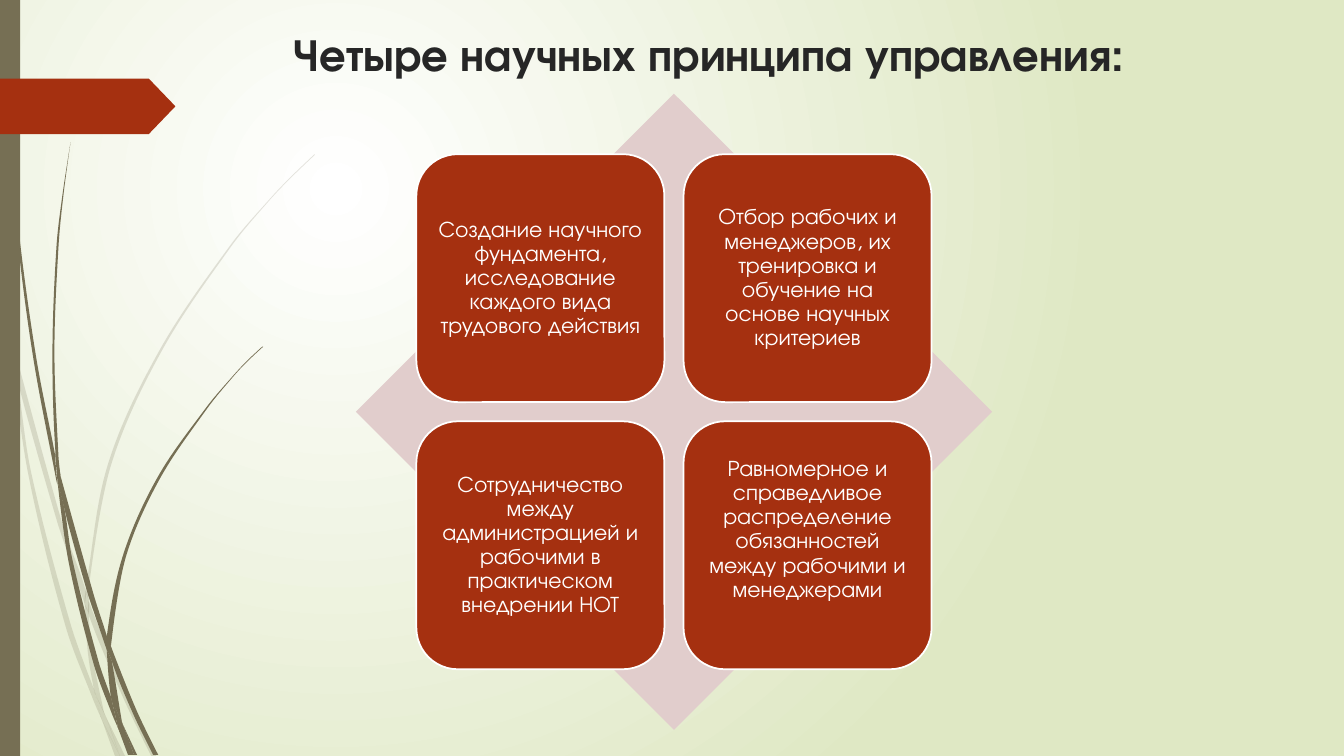
from math import hypot
from lxml.etree import SubElement
from pptx import Presentation
from pptx.dml.color import RGBColor
from pptx.enum.shapes import MSO_SHAPE as Shape
from pptx.enum.text import MSO_ANCHOR as Anchor, PP_ALIGN as Align
from pptx.oxml import parse_xml
from pptx.oxml.ns import nsdecls, qn
from pptx.util import Inches, Pt

FONT = "TeX Gyre Adventor"
OLIVE, RUST, ROSE, WHITE, INK = "766F54", "A53010", "E1CDCC", "FFFFFF", "262626"
UNITS = 10000  # freeform units per inch


def paint(shape, color, line=None):
    shape.shadow.inherit = False
    shape.fill.solid()
    shape.fill.fore_color.rgb = RGBColor.from_string(color)
    if line:
        shape.line.color.rgb = RGBColor.from_string(line)
        shape.line.width = Pt(1.25)
    else:
        shape.line.fill.background()


def round_off(shape):
    """Turn the straight sides of a freeform into curves, keeping sharp corners."""
    points = [(int(pt.get("x")), int(pt.get("y"))) for pt in shape.element.iter(qn("a:pt"))]
    count = len(points)
    handles = []
    for index, (x, y) in enumerate(points):
        (x0, y0), (x1, y1) = points[index - 1], points[(index + 1) % count]
        before, after = hypot(x - x0, y - y0), hypot(x1 - x, y1 - y)
        turn = (x - x0) * (x1 - x) + (y - y0) * (y1 - y)
        chord = hypot(x1 - x0, y1 - y0)
        bends = turn > 0.8 * before * after and chord > 0
        handles.append(((x1 - x0) / chord / 3, (y1 - y0) / chord / 3) if bends else (0, 0))
    for index, side in enumerate(list(shape.element.iter(qn("a:lnTo"))), start=1):
        (x0, y0), (x1, y1) = points[index - 1], points[index]
        (dx0, dy0), (dx1, dy1) = handles[index - 1], handles[index]
        length = hypot(x1 - x0, y1 - y0)
        side.tag = qn("a:cubicBezTo")
        controls = [(x0 + dx0 * length, y0 + dy0 * length), (x1 - dx1 * length, y1 - dy1 * length)]
        for position, (x, y) in enumerate(controls):
            control = SubElement(side, qn("a:pt"), x=str(round(x)), y=str(round(y)))
            side.insert(position, control)


presentation = Presentation()
presentation.slide_width, presentation.slide_height = Inches(13.33), Inches(7.5)
slide = presentation.slides.add_slide(presentation.slide_layouts[5])
shapes = slide.shapes

# Background: radial gradient
slide.element.find(qn("p:cSld")).insert(0, parse_xml(
    f'<p:bg {nsdecls("p", "a")}><p:bgPr><a:gradFill rotWithShape="1"><a:gsLst>'
    '<a:gs pos="0"><a:srgbClr val="FFFFFF"/></a:gs>'
    '<a:gs pos="100000"><a:srgbClr val="DFE8C4"/></a:gs></a:gsLst>'
    '<a:path path="circle"><a:fillToRect l="50000" t="50000" r="100000" b="100000"/></a:path>'
    '</a:gradFill><a:effectLst/></p:bgPr></p:bg>'))

# Grass: outlines of the blade sections in inches, pale ones behind dark ones
pale_grass = [
    [(0.11, 3.5), (0.09, 3.22), (0, 2.82), (0, 2.99), (0.1, 3.44)],
    [(0.58, 5.22), (0.84, 5.99), (0.85, 5.86), (0.62, 5.2), (0.14, 3.45), (0.17, 3.76)],
    [(0.92, 6.07), (0.88, 5.96), (0.88, 6.1), (1.23, 6.94), (1.5, 7.5), (1.55, 7.5),
     (1.27, 6.92)],
    [(1.19, 7.5), (1.24, 7.5), (1.05, 7.11)],
    [(0.93, 6.83), (0.7, 6.19), (0.31, 4.69), (0.17, 3.76), (0.11, 3.5), (0.28, 4.7),
     (0.65, 6.21), (0.92, 6.93), (1.01, 7.14), (0.99, 7.07)],
    [(0.84, 5.99), (0.87, 6.46), (0.93, 6.83), (0.96, 6.92), (1.05, 7.11), (1.03, 7.06),
     (0.91, 6.46), (0.88, 6.1), (0.88, 6.08)],
    [(0.88, 5.84), (1.1, 4.62), (1.6, 3.49), (2.29, 2.45), (2.68, 1.98), (2.9, 1.75),
     (3.12, 1.54), (3.12, 1.53), (2.89, 1.75), (2.68, 1.97), (2.28, 2.44), (1.58, 3.48),
     (1.07, 4.61), (0.85, 5.84), (0.85, 5.86), (0.88, 5.96)],
    [(1.01, 7.14), (1.14, 7.5), (1.19, 7.5)],
    [(0.88, 6.08), (0.88, 6.1), (0.88, 5.96), (0.85, 5.86), (0.84, 5.99)],
    [(0.96, 6.92), (0.93, 6.83), (0.99, 7.07), (1.01, 7.14), (1.19, 7.5), (1.05, 7.11)],
]
dark_grass = [
    [(0.07, 1.1), (0.17, 2.33), (0.33, 3.55), (0.56, 4.77), (0.57, 4.81), (0.55, 4.57),
     (0.55, 4.53), (0.36, 3.55), (0.19, 2.32), (0.08, 1.09), (0.05, 0.48), (0.04, 0),
     (0.03, 0), (0.04, 0.48)],
    [(0.88, 5.92), (1.06, 6.45), (1.06, 6.33), (1.06, 6.31), (0.93, 5.9), (0.6, 4.72),
     (0.64, 5.05)],
    [(1.13, 6.49), (1.1, 6.41), (1.11, 6.56), (1.32, 7.08), (1.52, 7.49), (1.57, 7.49),
     (1.36, 7.06)],
    [(1.1, 6.91), (0.98, 6.57), (0.72, 5.56), (0.64, 5.05), (0.57, 4.77), (0.68, 5.57),
     (0.93, 6.59), (1.11, 7.08), (1.17, 7.22), (1.16, 7.17)],
    [(0.6, 4.72), (0.58, 4.53), (0.54, 3.49), (0.58, 2.45), (0.63, 1.93), (0.7, 1.41),
     (0.62, 1.93), (0.56, 2.45), (0.52, 3.49), (0.55, 4.49)],
    [(1.33, 7.49), (1.36, 7.49), (1.22, 7.19)],
    [(0.57, 4.77), (0.64, 5.05), (0.6, 4.72), (0.55, 4.49), (0.55, 4.53)],
    [(1.11, 6.33), (1.25, 5.52), (1.58, 4.76), (2.05, 4.06), (2.31, 3.74), (2.45, 3.59),
     (2.61, 3.44), (2.6, 3.44), (2.45, 3.58), (2.31, 3.73), (2.04, 4.05), (1.56, 4.74),
     (1.22, 5.51), (1.06, 6.31), (1.1, 6.41)],
    [(1.17, 7.22), (1.27, 7.49), (1.31, 7.49)],
    [(1.06, 6.45), (1.1, 6.91), (1.16, 7.06), (1.22, 7.19), (1.21, 7.16), (1.11, 6.56),
     (1.09, 6.51)],
    [(1.06, 6.45), (1.09, 6.51), (1.11, 6.56), (1.1, 6.41), (1.06, 6.31), (1.06, 6.33)],
    [(1.16, 7.06), (1.1, 6.91), (1.16, 7.17), (1.17, 7.22), (1.3, 7.49), (1.33, 7.49),
     (1.22, 7.19)],
]
for opacity, sections in ((20, pale_grass), (100, dark_grass)):
    for section in sections:
        outline = [(x * UNITS, y * UNITS) for x, y in section]
        builder = shapes.build_freeform(*outline[0], scale=Inches(1) / UNITS)
        builder.add_line_segments(outline[1:] + outline[:1], close=True)
        blade = builder.convert_to_shape()
        paint(blade, OLIVE)
        round_off(blade)
        if opacity < 100:
            color = blade.element.spPr.find(qn("a:solidFill"))[0]
            SubElement(color, qn("a:alpha"), val=str(opacity * 1000))

# Side bar and arrow tab
side_bar = shapes.add_shape(Shape.RECTANGLE, 0, 0, Inches(0.2), presentation.slide_height)
paint(side_bar, OLIVE)
tab = shapes.add_shape(Shape.PENTAGON, 0, Inches(0.78), Inches(1.74), Inches(0.55))
tab.adjustments[0] = 0.48
paint(tab, RUST)

# Title
title = shapes.title
title.left, title.top, title.width, title.height = map(Inches, (1.63, 0.2, 10.81, 0.66))
title.text_frame.text = "Четыре научных принципа управления:"
title.text_frame.vertical_anchor = Anchor.MIDDLE
heading = title.text_frame.paragraphs[0]
heading.alignment = Align.CENTER
heading.font.name, heading.font.size, heading.font.bold = FONT, Pt(32.4), True
heading.font.color.rgb = RGBColor.from_string(INK)

# Diamond behind the cards
diamond = shapes.add_shape(Shape.DIAMOND, *map(Inches, (3.53, 0.93, 6.31, 6.31)))
paint(diamond, ROSE)

# Four principle cards in a 2 x 2 grid; the last text sits a little higher
LEFT, TOP, CARD, PITCH, INSET = 4.13, 1.53, 2.46, 2.65, 0.07
principles = [
    ("Создание научного фундамента, исследование каждого вида трудового действия", INSET),
    ("Отбор рабочих и менеджеров, их тренировка и обучение на основе научных критериев", INSET),
    ("Сотрудничество между администрацией и рабочими в практическом внедрении НОТ", INSET),
    ("Равномерное и справедливое распределение обязанностей между рабочими и менеджерами", 0.38),
]
for index, (text, bottom_inset) in enumerate(principles):
    row, column = divmod(index, 2)
    card = shapes.add_shape(Shape.ROUNDED_RECTANGLE, Inches(LEFT + column * PITCH),
                            Inches(TOP + row * PITCH), Inches(CARD), Inches(CARD))
    paint(card, RUST, WHITE)
    frame = card.text_frame
    frame.text = text
    frame.word_wrap = True
    frame.vertical_anchor = Anchor.MIDDLE
    frame.margin_left = frame.margin_right = frame.margin_top = Inches(INSET)
    frame.margin_bottom = Inches(bottom_inset)
    paragraph = frame.paragraphs[0]
    paragraph.alignment = Align.CENTER
    paragraph.line_spacing = 0.9
    paragraph.font.name, paragraph.font.size = FONT, Pt(16)
    paragraph.font.color.rgb = RGBColor.from_string(WHITE)

presentation.save("out.pptx")
